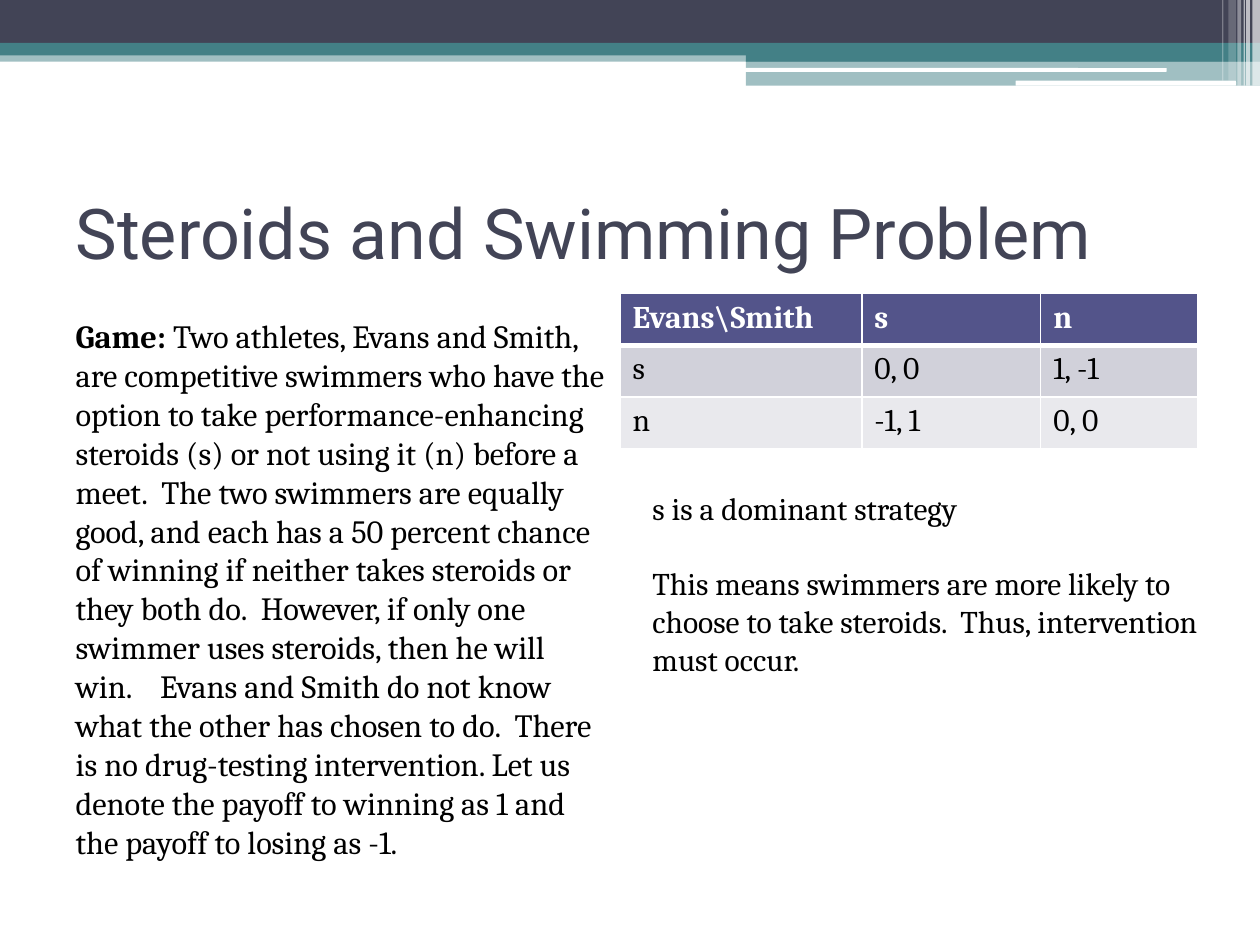
from lxml.etree import SubElement
from pptx import Presentation
from pptx.dml.color import RGBColor
from pptx.enum.shapes import MSO_SHAPE
from pptx.enum.text import MSO_ANCHOR, MSO_AUTO_SIZE, PP_ALIGN
from pptx.oxml.ns import qn
from pptx.util import Inches, Pt

NAVY, TEAL, WHITE, BLACK = "424456", "438086", "FFFFFF", "000000"
HEADER, ROW_FILLS = "53548A", ("D1D1DA", "E9E9ED")
MARGIN = 0.5
SPLIT = 4.92  # where the left column ends and the table starts

# left, top, width, height, colour, opacity in percent
BANDS = [
    (0, 0.4, 10, 0.09, TEAL, 50),
    (0, 0, 10, 0.34, NAVY, 100),
    (0, 0.34, 10, 0.1, TEAL, 100),
    (5.92, 0.39, 4.08, 0.1, TEAL, 100),
    (5.92, 0.48, 4.08, 0.2, TEAL, 50),
]
WHITE_BARS = [(5.91, 0.54, 3.35, 0.03), (8.06, 0.64, 1.75, 0.04)]
# left, width, height, opacity in percent
STRIPES = [
    (9.94, 0.06, 0.68, 65), (9.89, 0.03, 0.68, 65), (9.87, 0.01, 0.68, 60),
    (9.82, 0.03, 0.68, 40), (9.75, 0.06, 0.64, 20), (9.7, 0.01, 0.64, 30),
]

PAYOFFS = [["Evans\\Smith", "s", "n"], ["s", "0, 0", "1, -1"], ["n", "-1, 1", "0, 0"]]
COLUMN_WIDTHS, ROW_HEIGHT = (1.92, 1.42, 1.25), 0.41

GAME = (
    "Two athletes, Evans and Smith, are competitive swimmers who have the option "
    "to take performance-enhancing steroids (s) or not using it (n) before a meet.  "
    "The two swimmers are equally good, and each has a 50 percent chance of winning "
    "if neither takes steroids or they both do.  However, if only one swimmer uses "
    "steroids, then he will win.    Evans and Smith do not know what the other has "
    "chosen to do.  There is no drug-testing intervention. Let us denote the payoff "
    "to winning as 1 and the payoff to losing as -1."
)
CONCLUSIONS = [
    "s is a dominant strategy",
    "This means swimmers are more likely to choose to take steroids.  "
    "Thus, intervention must occur.",
]


def color(value):
    return RGBColor.from_string(value)


def add_text(paragraph, text, size=18, font="Cambria", fill=BLACK, bold=False):
    run = paragraph.add_run()
    run.text = text
    run.font.size, run.font.name, run.font.bold = Pt(size), font, bold
    run.font.color.rgb = color(fill)
    paragraph.alignment = PP_ALIGN.LEFT


def place(shape, left, top, width, height):
    shape.left, shape.top = Inches(left), Inches(top)
    shape.width, shape.height = Inches(width), Inches(height)
    shape.text_frame.word_wrap = True
    shape.text_frame.auto_size = MSO_AUTO_SIZE.NONE


def add_bar(slide, box, fill, opacity=100, kind=MSO_SHAPE.RECTANGLE):
    shape = slide.shapes.add_shape(kind, *map(Inches, box))
    shape.shadow.inherit = False
    shape.fill.solid()
    shape.fill.fore_color.rgb = color(fill)
    shape.line.fill.background()
    if opacity < 100:
        solid = shape._element.spPr.find(qn("a:solidFill"))
        SubElement(solid[0], qn("a:alpha"), val=str(opacity * 1000))


def add_banner(slide):
    for *box, fill, opacity in BANDS:
        add_bar(slide, box, fill, opacity)
    for box in WHITE_BARS:
        add_bar(slide, box, WHITE, kind=MSO_SHAPE.ROUNDED_RECTANGLE)
    for left, width, height, opacity in STRIPES:
        add_bar(slide, (left, 0, width, height), WHITE, opacity)


def set_borders(cell, bottom):
    properties = cell._tc.get_or_add_tcPr()
    widths = {"lnL": 1, "lnR": 1, "lnT": 1, "lnB": bottom}
    for index, (side, width) in enumerate(widths.items()):
        line = SubElement(properties, qn(f"a:{side}"), w=str(Pt(width)))
        SubElement(SubElement(line, qn("a:solidFill")), qn("a:srgbClr"), val=WHITE)
        properties.insert(index, line)  # borders come before the fill


def add_payoff_table(slide):
    rows, columns = len(PAYOFFS), len(COLUMN_WIDTHS)
    table = slide.shapes.add_table(
        rows, columns, Inches(SPLIT), Inches(2.33),
        Inches(sum(COLUMN_WIDTHS)), Inches(rows * ROW_HEIGHT)).table
    for column, width in zip(table.columns, COLUMN_WIDTHS):
        column.width = Inches(width)
    for row_index, values in enumerate(PAYOFFS):
        table.rows[row_index].height = Inches(ROW_HEIGHT)
        is_header = row_index == 0
        for column_index, value in enumerate(values):
            cell = table.cell(row_index, column_index)
            cell.fill.solid()
            cell.fill.fore_color.rgb = color(HEADER if is_header else ROW_FILLS[row_index - 1])
            # the rule under the header is shared with the first row's top edge
            set_borders(cell, bottom=3 if is_header else 1)
            if row_index == 1:
                cell._tc.tcPr.find(qn("a:lnT")).set("w", str(Pt(3)))
            add_text(cell.text_frame.paragraphs[0], value,
                     fill=WHITE if is_header else BLACK, bold=is_header)


def fill_title(title):
    place(title, MARGIN, 1.25, 9, 1.17)
    title.text_frame.vertical_anchor = MSO_ANCHOR.MIDDLE
    add_text(title.text_frame.paragraphs[0], "Steroids and Swimming Problem",
             size=40, font="Roboto", fill=NAVY)


def fill_body(body):
    place(body, MARGIN, 2.46, SPLIT - MARGIN, 4.95)
    paragraph = body.text_frame.paragraphs[0]
    paragraph.space_before = Pt(3)
    add_text(paragraph, "Game: ", size=18.5, bold=True)
    add_text(paragraph, GAME, size=18.5)
    # plain paragraph: no bullet, no hanging indent
    properties = paragraph._p.get_or_add_pPr()
    properties.set("marL", "0")
    properties.set("indent", "0")
    SubElement(properties, qn("a:buNone"))


def add_conclusions(slide):
    box = slide.shapes.add_textbox(0, 0, 0, 0)
    place(box, 5.08, 3.83, 4.58, 1.62)
    first, second = box.text_frame.paragraphs[0], box.text_frame.add_paragraph()
    second.space_before = Pt(21.5)  # one line of text
    for paragraph, text in zip((first, second), CONCLUSIONS):
        add_text(paragraph, text)


def main():
    presentation = Presentation()
    presentation.slide_width, presentation.slide_height = Inches(10), Inches(7.5)
    slide = presentation.slides.add_slide(presentation.slide_layouts[1])
    add_banner(slide)
    fill_title(slide.shapes.title)
    fill_body(slide.placeholders[1])
    add_payoff_table(slide)
    add_conclusions(slide)
    presentation.save("out.pptx")


if __name__ == "__main__":
    main()
